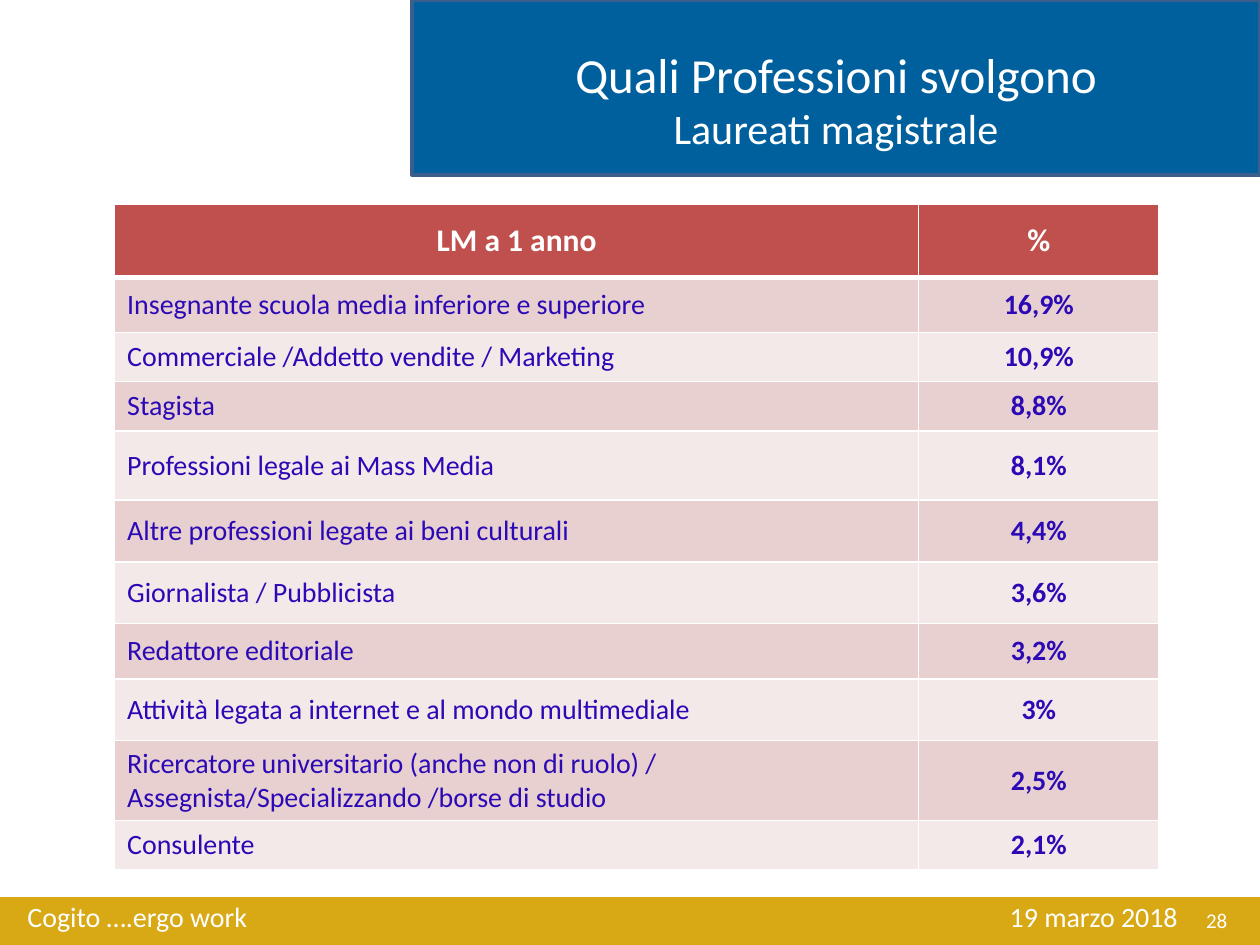
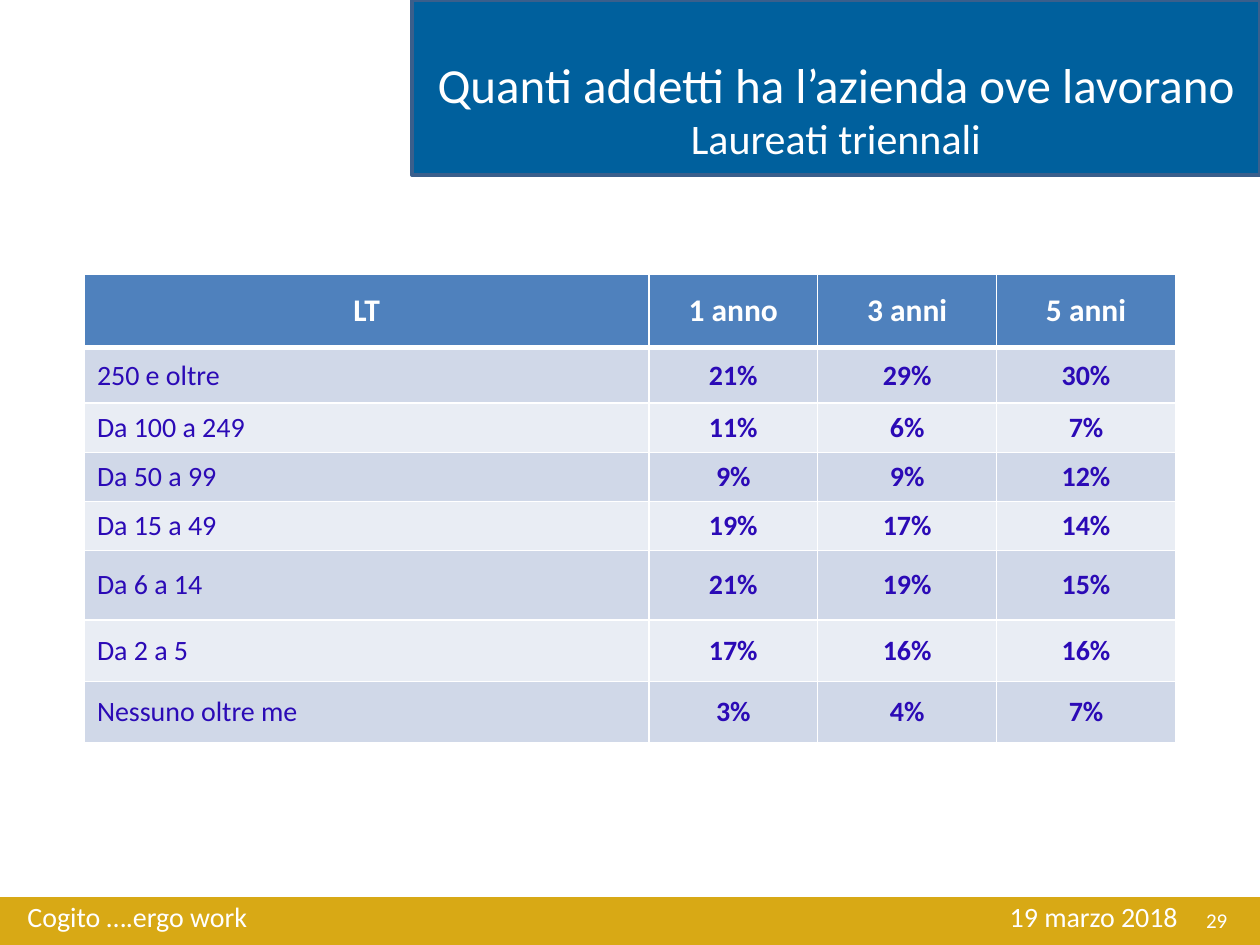
from lxml import etree
from pptx import Presentation
from pptx.dml.color import RGBColor
from pptx.enum.shapes import MSO_SHAPE
from pptx.enum.text import MSO_ANCHOR, PP_ALIGN
from pptx.oxml.ns import qn
from pptx.util import Inches, Pt

RECT = MSO_SHAPE.RECTANGLE
TOP, MIDDLE = MSO_ANCHOR.TOP, MSO_ANCHOR.MIDDLE
LEFT, CENTER, RIGHT = PP_ALIGN.LEFT, PP_ALIGN.CENTER, PP_ALIGN.RIGHT

FONT = "Calibri"
COLORS = {
    "white": "FFFFFF",
    "title_band": "00609D",
    "title_edge": "3A5F8C",
    "footer_band": "D8A915",
    "body_text": "2B0AB6",
}
# Header fill, then the two alternating row fills
RED_TABLE = ("C0504D", "E8D0D0", "F4E9E9")
BLUE_TABLE = ("4F81BD", "D0D8E8", "E9EDF4")

FOOTER_TEXT = "Cogito ….ergo work\t19 marzo 2018"
DATE_TAB = 9.13

GRADUATE_JOBS = [
    ("LM a 1 anno", "%"),
    ("Insegnante scuola media inferiore e superiore", "16,9%"),
    ("Commerciale /Addetto vendite / Marketing", "10,9%"),
    ("Stagista", "8,8%"),
    ("Professioni legale ai Mass Media", "8,1%"),
    ("Altre professioni legate ai beni culturali", "4,4%"),
    ("Giornalista / Pubblicista", "3,6%"),
    ("Redattore editoriale", "3,2%"),
    ("Attività legata a internet e al mondo multimediale", "3%"),
    ("Ricercatore universitario (anche non di ruolo) / "
     "Assegnista/Specializzando /borse di studio", "2,5%"),
    ("Consulente", "2,1%"),
]
JOB_ROW_HEIGHTS = [0.58, 0.44, 0.39, 0.39, 0.55, 0.49, 0.49, 0.44, 0.49, 0.45, 0.39]

COMPANY_SIZES = [
    ("LT", "1 anno", "3 anni", "5 anni"),
    ("250 e oltre", "21%", "29%", "30%"),
    ("Da 100 a 249", "11%", "6%", "7%"),
    ("Da 50 a 99", "9%", "9%", "12%"),
    ("Da 15 a 49", "19%", "17%", "14%"),
    ("Da 6 a 14", "21%", "19%", "15%"),
    ("Da 2 a 5", "17%", "16%", "16%"),
    ("Nessuno oltre me", "3%", "4%", "7%"),
]
SIZE_ROW_HEIGHTS = [0.58, 0.44, 0.39, 0.39, 0.39, 0.55, 0.49, 0.49]


class Deck:
    """Holds the shared style and the slide being built."""

    def __init__(self):
        self.prs = Presentation()
        self.prs.slide_width, self.prs.slide_height = Inches(10), Inches(7.5)
        self.slide = None

    def start_slide(self, number, title, subtitle, title_top, title_height):
        self.slide = self.prs.slides.add_slide(self.prs.slide_layouts[6])
        # Footer and title bands
        self.band(0, 7.12, 10, 0.38, "footer_band")
        self.band(3.27, 0, 6.73, 1.39, "title_band", "title_edge")
        # Slide number, title and footer text
        self.text(7.51, 7.1, 2.33, 0.4, [(str(number), 12)], RIGHT, MIDDLE)
        self.text(3.27, title_top, 6.73, title_height,
                  [(title, 28), (subtitle, 24)], CENTER)
        self.text(0.12, 7.09, 9.37, 0.44, [(FOOTER_TEXT, 16)], tab=DATE_TAB)

    def band(self, left, top, width, height, fill, edge=None):
        band = self.slide.shapes.add_shape(
            RECT, Inches(left), Inches(top), Inches(width), Inches(height))
        band.shadow.inherit = False
        band.fill.solid()
        band.fill.fore_color.rgb = RGBColor.from_string(COLORS[fill])
        if edge:
            band.line.color.rgb = RGBColor.from_string(COLORS[edge])
            band.line.width = Pt(2)
        else:
            band.line.fill.background()

    def text(self, left, top, width, height, lines, align=LEFT, anchor=TOP, tab=None):
        frame = self.slide.shapes.add_textbox(
            Inches(left), Inches(top), Inches(width), Inches(height)).text_frame
        frame.word_wrap = True
        frame.vertical_anchor = anchor
        frame.text = "\n".join(line for line, _ in lines)
        for paragraph, (_, size) in zip(frame.paragraphs, lines):
            if tab:
                self.right_tab(paragraph, tab)
            self.format(paragraph, size, "white", align)

    def right_tab(self, paragraph, position):
        properties = paragraph._p.get_or_add_pPr()
        tabs = etree.SubElement(properties, qn("a:tabLst"))
        etree.SubElement(tabs, qn("a:tab"), pos=str(Inches(position)), algn="r")

    def format(self, paragraph, size, color, align, bold=False):
        paragraph.alignment = align
        for run in paragraph.runs:
            run.font.name = FONT
            run.font.size = Pt(size)
            run.font.bold = bold
            run.font.color.rgb = RGBColor.from_string(COLORS[color])

    def table(self, left, top, column_widths, row_heights, rows, fills):
        table = self.slide.shapes.add_table(
            len(rows), len(column_widths), Inches(left), Inches(top),
            Inches(sum(column_widths)), Inches(sum(row_heights))).table
        for column, width in zip(table.columns, column_widths):
            column.width = Inches(width)
        for row, height in zip(table.rows, row_heights):
            row.height = Inches(height)
        header_fill, *row_fills = fills
        for r, values in enumerate(rows):
            header = r == 0
            fill = header_fill if header else row_fills[(r - 1) % 2]
            for c, value in enumerate(values):
                cell = table.cell(r, c)
                cell.text = value
                cell.vertical_anchor = MIDDLE
                cell.fill.solid()
                cell.fill.fore_color.rgb = RGBColor.from_string(fill)
                self.format(cell.text_frame.paragraphs[0],
                            18 if header else 16,
                            "white" if header else "body_text",
                            CENTER if header or c else LEFT,
                            bold=header or c > 0)
                self.borders(cell, top=3 if r == 1 else 1, bottom=3 if header else 1)

    def borders(self, cell, top, bottom):
        properties = cell._tc.get_or_add_tcPr()
        sides = [("a:lnL", 1), ("a:lnR", 1), ("a:lnT", top), ("a:lnB", bottom)]
        for index, (side, width) in enumerate(sides):
            line = etree.Element(qn(side), w=str(Pt(width)))
            solid = etree.SubElement(line, qn("a:solidFill"))
            etree.SubElement(solid, qn("a:srgbClr"), val=COLORS["white"])
            properties.insert(index, line)


def main():
    deck = Deck()

    # Professions of master's graduates
    deck.start_slide(28, "Quali Professioni svolgono", "Laureati magistrale", 0.3, 1.01)
    deck.table(0.91, 1.62, [6.38, 1.91], JOB_ROW_HEIGHTS, GRADUATE_JOBS, RED_TABLE)

    # Company size for bachelor's graduates
    deck.start_slide(29, "Quanti addetti ha l’azienda ove lavorano",
                     "Laureati triennali", 0.38, 0.44)
    deck.table(0.67, 2.18, [4.48, 1.34, 1.42, 1.42], SIZE_ROW_HEIGHTS,
               COMPANY_SIZES, BLUE_TABLE)

    deck.prs.save("out.pptx")


if __name__ == "__main__":
    main()
